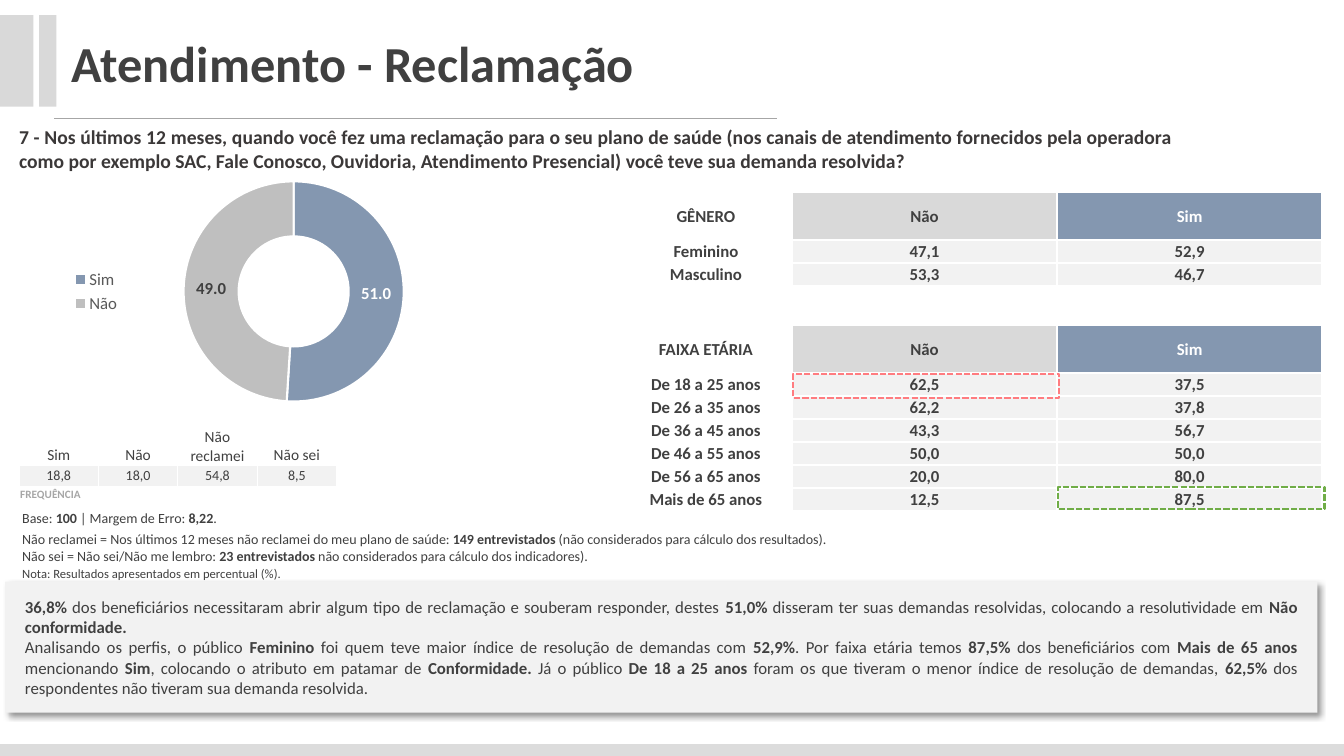
from lxml import etree
from pptx import Presentation, util as u
from pptx.chart.data import CategoryChartData
from pptx.dml.color import RGBColor
from pptx.enum import chart as ch, dml, shapes, text
from pptx.oxml import parse_xml
from pptx.oxml.ns import qn

HUES = {"ink": "404040", "ask": "3B3838", "blue": "8497B0", "gray": "D9D9D9", "ring": "BFBFBF",
        "pale": "F2F2F2", "rule": "A6A6A6", "foot": "DCDCDC", "key": "595959", "white": "FFFFFF",
        "low": "FF7C80", "high": "70AD47"}
FONT = "Calibri"
PLAIN = "{2D5ABB26-0587-4C30-8999-92F81FD0307C}"
NS = 'xmlns:a="http://schemas.openxmlformats.org/drawingml/2006/main"'
MID, LOW, TOP = text.MSO_ANCHOR.MIDDLE, text.MSO_ANCHOR.BOTTOM, text.MSO_ANCHOR.TOP
LEFT, CENTER, FULL = text.PP_ALIGN.LEFT, text.PP_ALIGN.CENTER, text.PP_ALIGN.JUSTIFY


def hue(name):
    return RGBColor.from_string(HUES[name])


def style(font, size, color="ink", bold=False):
    font.name, font.size, font.bold = FONT, u.Pt(size), bold
    font.color.rgb = hue(color)


def write(frame, words, size=12, color="ink", bold=False, align=LEFT, anchor=TOP, pad=None):
    """Fill a frame; a line break starts a paragraph and *stars* mark bold words."""
    frame.word_wrap = True
    frame.vertical_anchor = anchor
    if pad:
        frame.margin_left = frame.margin_right = u.Cm(pad[0])
        frame.margin_top = frame.margin_bottom = u.Cm(pad[1])
    for i, line in enumerate(words.split("\n")):
        para = frame.paragraphs[0] if i == 0 else frame.add_paragraph()
        para.alignment = align
        for j, part in enumerate(line.split("*")):
            if part:
                run = para.add_run()
                run.text = part
                style(run.font, size, color, bold or j % 2 == 1)


class Page:
    def __init__(self, deck):
        self.slide = deck.slides.add_slide(deck.slide_layouts[5])
        self.items = self.slide.shapes

    def title(self, words, *box):
        head = self.items.title
        head.left, head.top, head.width, head.height = map(u.Cm, box)
        write(head.text_frame, words, size=36, bold=True)
        head.text_frame.auto_size = text.MSO_AUTO_SIZE.NONE

    def rect(self, *box, fill=None, edge=None):
        item = self.items.add_shape(shapes.MSO_SHAPE.RECTANGLE, *map(u.Cm, box))
        item.shadow.inherit = False
        if fill:
            item.fill.solid()
            item.fill.fore_color.rgb = hue(fill)
        else:
            item.fill.background()
        if edge:
            item.line.color.rgb = hue(edge)
            item.line.width = u.Pt(1.5)
            item.line.dash_style = dml.MSO_LINE.SQUARE_DOT
            item.line._ln.find(qn("a:prstDash")).set("val", "sysDash")
        else:
            item.line.fill.background()
        return item

    def panel(self, words, *box):
        item = self.rect(*box, fill="pale")
        item._element.spPr.find(qn("a:effectLst")).append(parse_xml(
            f'<a:outerShdw {NS} blurRad="50800" dist="38100" dir="2700000" algn="tl" rotWithShape="0">'
            '<a:srgbClr val="000000"><a:alpha val="40000"/></a:srgbClr></a:outerShdw>'))
        write(item.text_frame, words, align=FULL, anchor=MID, pad=(0.5, 0.1))

    def rule(self, *ends):
        line = self.items.add_connector(shapes.MSO_CONNECTOR.STRAIGHT, *map(u.Cm, ends))
        line.line.color.rgb = hue("rule")
        line.line.width = u.Pt(0.5)
        etree.SubElement(line._element.spPr, qn("a:effectLst"))

    def label(self, words, *box, **look):
        write(self.items.add_textbox(*map(u.Cm, box)).text_frame, words, **look)

    def table(self, left, top, cols, rows):
        frame = self.items.add_table(len(rows), len(cols), u.Cm(left), u.Cm(top),
                                     u.Cm(sum(cols)), u.Cm(sum(rows)))
        grid = frame.table
        grid.first_row = grid.horz_banding = False
        grid._tbl.tblPr.find(qn("a:tableStyleId")).text = PLAIN
        for col, size in zip(grid.columns, cols):
            col.width = u.Cm(size)
        for row, size in zip(grid.rows, rows):
            row.height = u.Cm(size)
        return grid

    def cell(self, cell, words="", fill=None, edge=0, **look):
        cell.margin_left = cell.margin_right = cell.margin_top = u.Cm(0.03)
        cell.margin_bottom = 0
        cell.vertical_anchor = look.pop("anchor", TOP)
        write(cell.text_frame, words, anchor=None, **look)
        if fill:
            cell.fill.solid()
            cell.fill.fore_color.rgb = hue(fill)
        else:
            cell.fill.background()
        if edge:
            props = cell._tc.get_or_add_tcPr()
            for i, side in enumerate("LRTB"):
                props.insert(i, parse_xml(
                    f'<a:ln{side} {NS} w="{u.Pt(edge)}"><a:solidFill>'
                    f'<a:srgbClr val="{HUES["white"]}"/></a:solidFill></a:ln{side}>'))

    def ring(self, names, vals, *box):
        data = CategoryChartData(number_format="0.0")
        data.categories = names
        data.add_series("Series 1", vals)
        chart = self.items.add_chart(ch.XL_CHART_TYPE.DOUGHNUT, *map(u.Cm, box), data).chart
        chart.has_title = False
        style(chart.font, 10)
        chart.has_legend = True
        chart.legend.position = ch.XL_LEGEND_POSITION.LEFT
        chart.legend.include_in_layout = False
        style(chart.legend.font, 12, "key")
        plot = chart.plots[0]
        plot.vary_by_categories = True
        plot.has_data_labels = True
        tags = plot.data_labels
        tags.show_value, tags.show_percentage = True, False
        tags.number_format, tags.number_format_is_linked = "0.0", False
        style(tags.font, 12, "white", True)
        for i, color in enumerate(("blue", "ring")):
            point = plot.series[0].points[i]
            point.format.fill.solid()
            point.format.fill.fore_color.rgb = hue(color)
            point.format.line.color.rgb = hue("white")
            point.format.line.width = u.Pt(1.5)
            style(point.data_label.font, 12, ("white", "ink")[i], True)


def main():
    deck = Presentation()
    deck.slide_width, deck.slide_height = u.Cm(33.87), u.Cm(19.05)
    page = Page(deck)
    page.rect(0, 18.75, 33.87, 0.3, fill="foot")
    page.rule(1.37, 2.97, 19.58, 2.97)
    for left, width in ((0, 0.84), (0.99, 0.43)):
        page.rect(left, 0.38, width, 2.31, fill="gray")
    page.title("Atendimento - Reclamação", 1.55, 0.69, 14.83, 1.8)
    page.label("7 - Nos últimos 12 meses, quando você fez uma reclamação para o seu plano de saúde "
               "(nos canais de atendimento fornecidos pela operadora como por exemplo SAC, Fale Conosco, "
               "Ouvidoria, Atendimento Presencial) você teve sua demanda resolvida?",
               0.2, 3, 29.64, 1.47, size=14, color="ask", bold=True, align=FULL, pad=(0.28, 0.15))

    head = ("Não", "Sim")
    groups = [("GÊNERO", *head), ("Feminino", "47,1", "52,9"), ("Masculino", "53,3", "46,7"),
              ("", "", ""), ("FAIXA ETÁRIA", *head),
              ("De 18 a 25 anos", "62,5", "37,5"), ("De 26 a 35 anos", "62,2", "37,8"),
              ("De 36 a 45 anos", "43,3", "56,7"), ("De 46 a 55 anos", "50,0", "50,0"),
              ("De 56 a 65 anos", "20,0", "80,0"), ("Mais de 65 anos", "12,5", "87,5")]
    tall = {0: 1.19, 3: 1, 4: 1.19}
    grid = page.table(15.62, 4.85, (4.34, 6.68, 6.68), [tall.get(i, 0.58) for i in range(len(groups))])
    for r, row in enumerate(groups):
        top = row[1:] == head
        fills = (None, "gray", "blue") if top else (None, "pale", "pale")
        for c, words in enumerate(row):
            page.cell(grid.cell(r, c), words, fill=fills[c] if words else None, edge=1.5 if c else 0,
                      color="white" if top and c == 2 else "ink", bold=True, align=CENTER, anchor=MID)

    notes = ["Base: *100* | Margem de Erro: *8,22*.",
             "Não reclamei = Nos últimos 12 meses não reclamei do meu plano de saúde: "
             "*149 entrevistados *(não considerados para cálculo dos resultados).\n"
             "Não sei = Não sei/Não me lembro: *23 entrevistados* não considerados para cálculo dos indicadores).",
             "Nota: Resultados apresentados em percentual (%)."]
    grid = page.table(0.53, 12.83, (10.3, 10.3), (0.53, 0.88, 0.53))
    for r, words in enumerate(notes):
        if r < 2:
            grid.cell(r, 0).merge(grid.cell(r, 1))
        page.cell(grid.cell(r, 0), words, size=9 if r == 2 else 10)

    rates = (("Sim", "18,8"), ("Não", "18,0"), ("Não reclamei", "54,8"), ("Não sei", "8,5"))
    grid = page.table(0.48, 10.74, [2] * 4, (0.98, 0.53, 0.53))
    for c, (name, rate) in enumerate(rates):
        page.cell(grid.cell(0, c), name, size=11, edge=1, align=CENTER, anchor=LOW)
        page.cell(grid.cell(1, c), rate, size=10, fill="pale", edge=1, align=CENTER, anchor=MID)
    grid.cell(2, 0).merge(grid.cell(2, 2))
    page.cell(grid.cell(2, 0), "FREQUÊNCIA", size=8, color="rule", bold=True)

    page.panel("*36,8%* dos beneficiários necessitaram abrir algum tipo de reclamação e souberam responder, "
               "destes *51,0%* disseram ter suas demandas resolvidas, colocando a resolutividade em "
               "*Não conformidade.*\n"
               "Analisando os perfis, o público *Feminino* foi quem teve maior índice de resolução de demandas "
               "com *52,9%*. Por faixa etária temos *87,5% *dos beneficiários com *Mais de 65 anos *mencionando "
               "*Sim*, colocando o atributo em patamar de *Conformidade. *Já o público *De 18 a 25 anos *foram "
               "os que tiveram o menor índice de resolução de demandas, *62,5%* dos respondentes não tiveram "
               "sua demanda resolvida.", 0.13, 14.66, 33.07, 3.3)
    page.rect(19.99, 9.42, 6.71, 0.61, edge="low")
    page.rect(26.67, 12.27, 6.71, 0.56, edge="high")
    page.ring(head[::-1], (51, 49), 1.55, 4.22, 10.16, 6.25)
    deck.save("out.pptx")


if __name__ == "__main__":
    main()
